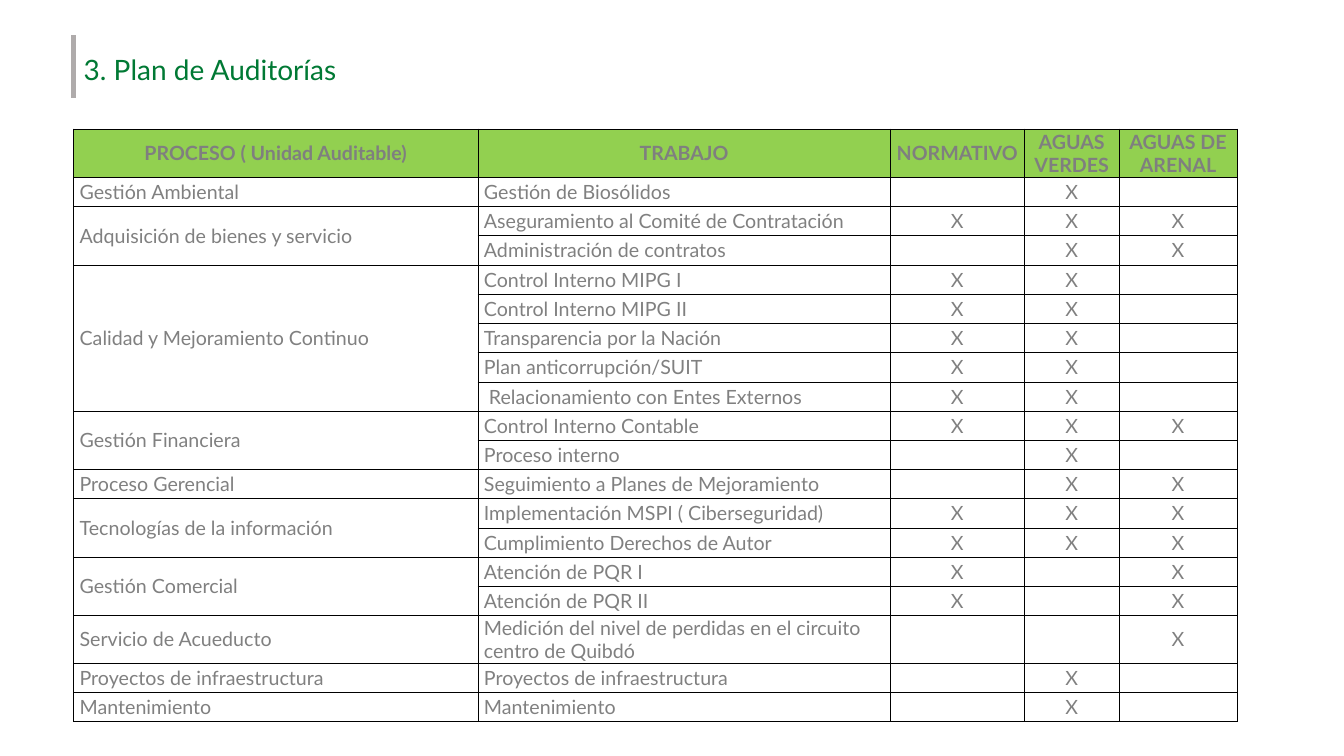
import pptx
import pptx.util
import pptx.dml.color
import pptx.enum.shapes
import pptx.enum.text
import pptx.oxml
import pptx.oxml.ns
from lxml import etree

Inches, Pt = pptx.util.Inches, pptx.util.Pt
ALIGN, ANCHOR = pptx.enum.text.PP_ALIGN, pptx.enum.text.MSO_ANCHOR

# Content
TITLE = "3. Plan de Auditorías"
HEADS = ["PROCESO ( Unidad Auditable)", "TRABAJO", "NORMATIVO",
         "AGUAS VERDES", "AGUAS DE ARENAL"]
# Each process lists its tasks, with one mark per check column
PLAN = [
    ("Gestión Ambiental", [("Gestión de Biosólidos", "-X-")]),
    ("Adquisición de bienes y servicio", [
        ("Aseguramiento al Comité de Contratación", "XXX"),
        ("Administración de contratos", "-XX")]),
    ("Calidad y Mejoramiento Continuo", [
        ("Control Interno MIPG I", "XX-"),
        ("Control Interno MIPG II", "XX-"),
        ("Transparencia por la Nación", "XX-"),
        ("Plan anticorrupción/SUIT", "XX-"),
        (" Relacionamiento con Entes Externos", "XX-")]),
    ("Gestión Financiera", [
        ("Control Interno Contable", "XXX"),
        ("Proceso interno", "-X-")]),
    ("Proceso Gerencial", [("Seguimiento a Planes de Mejoramiento", "-XX")]),
    ("Tecnologías de la información", [
        ("Implementación MSPI ( Ciberseguridad)", "XXX"),
        ("Cumplimiento Derechos de Autor", "XXX")]),
    ("Gestión Comercial", [
        ("Atención de PQR I", "X-X"),
        ("Atención de PQR II", "X-X")]),
    ("Servicio de Acueducto", [
        ("Medición del nivel de perdidas en el circuito centro de Quibdó", "--X")]),
    ("Proyectos de infraestructura", [("Proyectos de infraestructura", "-X-")]),
    ("Mantenimiento", [("Mantenimiento", "-X-")]),
]
COLORS = {"title": "007934", "bar": "AFABAB", "head": "92D050",
          "label": "7F7F7F", "body": "808080", "grid": "000000"}
FONT = "Lato"
LEFT, TOP = 0.73, 1.28
WIDTHS = [4.01, 4.09, 1.33, 0.94, 1.17]
HEAD_H, ROW_H, TALL_H = 0.48, 0.29, 0.47
WRAP = 50  # longer task names take two lines


def rgb(name):
    return pptx.dml.color.RGBColor.from_string(COLORS[name])


def add_run(para, text, size, color, bold=False):
    run = para.add_run()
    run.text = text
    run.font.name, run.font.size, run.font.bold = FONT, Pt(size), bold
    run.font.color.rgb = rgb(color)


def set_grid(cell):
    props = cell._tc.get_or_add_tcPr()
    for side in ("lnL", "lnR", "lnT", "lnB"):
        props.append(pptx.oxml.parse_xml(
            f'<a:{side} {pptx.oxml.ns.nsdecls("a")} w="{Pt(0.5)}"><a:solidFill>'
            f'<a:srgbClr val="{COLORS["grid"]}"/></a:solidFill></a:{side}>'))


def fill_cell(cell, text, head, center):
    set_grid(cell)
    if head:
        cell.fill.solid()
        cell.fill.fore_color.rgb = rgb("head")
    else:
        cell.fill.background()
    cell.margin_left = Inches(0 if center else 0.06)
    cell.margin_right = cell.margin_top = cell.margin_bottom = 0
    cell.vertical_anchor = ANCHOR.MIDDLE
    para = cell.text_frame.paragraphs[0]
    para.alignment = ALIGN.CENTER if center else ALIGN.LEFT
    if text:
        add_run(para, text, 14, "label" if head else "body", head)
    else:
        # Keeps blank cells from stretching the row
        etree.SubElement(para._p, pptx.oxml.ns.qn("a:endParaRPr"), sz="1400")


prs = pptx.Presentation()
prs.slide_width, prs.slide_height = Inches(13.33), Inches(7.5)
slide = prs.slides.add_slide(prs.slide_layouts[5])

# Title
title = slide.shapes.title
title.left, title.top = Inches(LEFT), Inches(0.47)
title.width, title.height = Inches(2.84), Inches(0.44)
frame = title.text_frame
frame.word_wrap = False
frame.auto_size = pptx.enum.text.MSO_AUTO_SIZE.NONE
frame.vertical_anchor = ANCHOR.MIDDLE
frame.paragraphs[0].alignment = ALIGN.LEFT
add_run(frame.paragraphs[0], TITLE, 20, "title")

# Bar beside the title
bar = slide.shapes.add_connector(
    pptx.enum.shapes.MSO_CONNECTOR.STRAIGHT,
    Inches(LEFT), Inches(0.97), Inches(LEFT), Inches(0.35))
bar.line.color.rgb = rgb("bar")
bar.line.width = Pt(3)
etree.SubElement(bar._element.spPr, pptx.oxml.ns.qn("a:effectLst"))

# Table rows and sizes
rows = [HEADS]
spans = []
for unit, tasks in PLAN:
    spans.append((len(rows), len(rows) + len(tasks) - 1))
    for i, (task, marks) in enumerate(tasks):
        rows.append([unit if i == 0 else "", task]
                    + [mark.replace("-", "") for mark in marks])
heights = [HEAD_H] + [TALL_H if len(row[1]) > WRAP else ROW_H for row in rows[1:]]

# Table
table = slide.shapes.add_table(
    len(rows), len(HEADS), Inches(LEFT), Inches(TOP),
    Inches(sum(WIDTHS)), Inches(sum(heights))).table
table.first_row = table.horz_banding = False
for col, width in zip(table.columns, WIDTHS):
    col.width = Inches(width)
for r, row in enumerate(rows):
    table.rows[r].height = Inches(heights[r])
    for c, text in enumerate(row):
        fill_cell(table.cell(r, c), text, r == 0, r == 0 or c > 1)
for first, last in spans:
    if last > first:
        table.cell(first, 0).merge(table.cell(last, 0))

prs.save("out.pptx")
